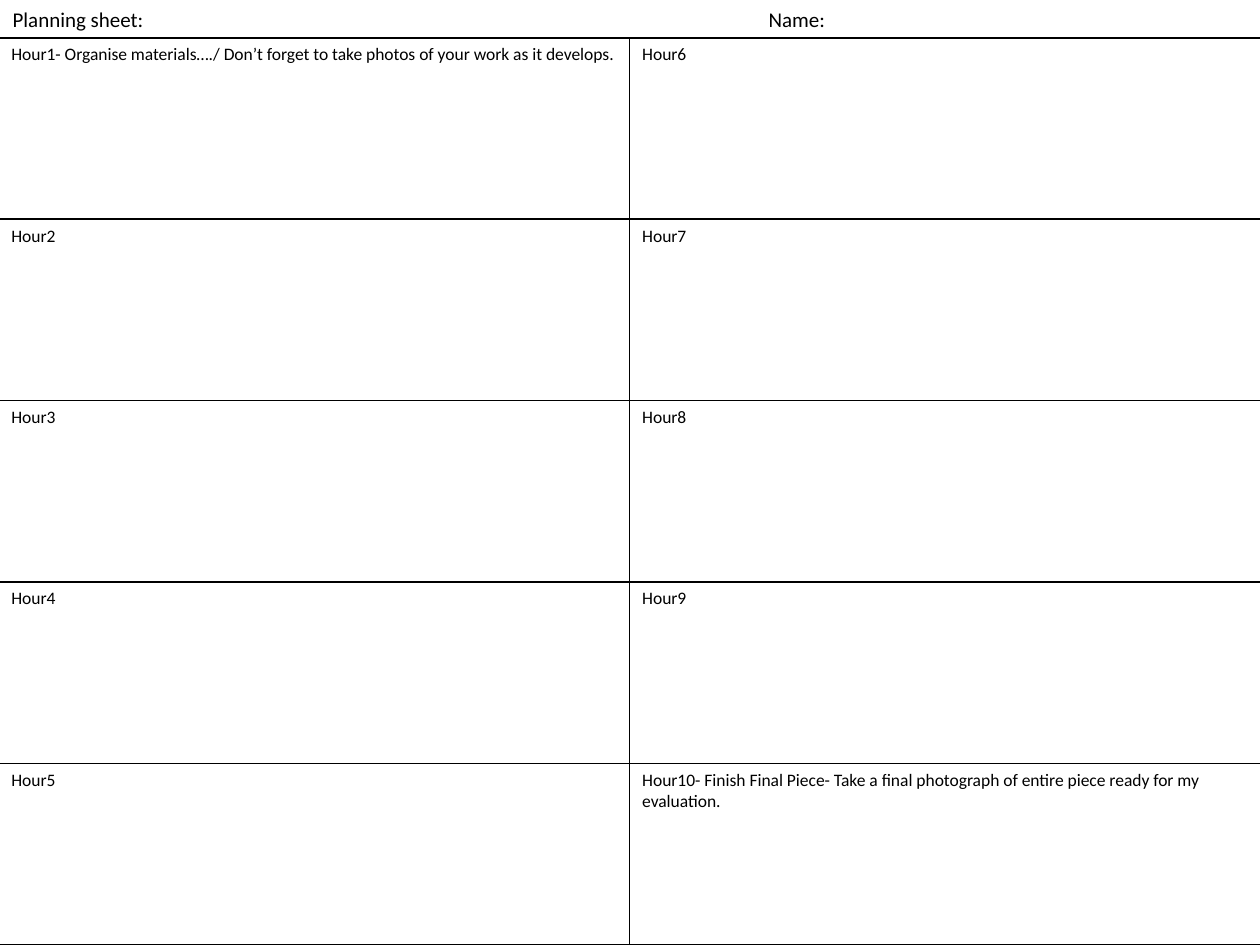
from lxml import etree
from pptx import Presentation
from pptx.dml.color import RGBColor
from pptx.enum.text import MSO_ANCHOR, MSO_AUTO_SIZE, PP_ALIGN
from pptx.oxml.ns import qn
from pptx.util import Pt

TOP = MSO_ANCHOR.TOP
NO_AUTOFIT = MSO_AUTO_SIZE.NONE
LEFT = PP_ALIGN.LEFT
BLACK = RGBColor(0, 0, 0)
FONT = "Calibri"
TITLE_ONLY_LAYOUT = 5
HEADING_HEIGHT = 21.6
ROW_HEIGHT = 103.68
COLUMN_WIDTH = 360.5
HOURS_PER_COLUMN = 5
HOUR_NOTES = {
    1: "- Organise materials…./ Don’t forget to take photos of your work as it develops.",
    10: "- Finish Final Piece- Take a final photograph of entire piece ready for my evaluation.",
}


def format_paragraph(paragraph, size):
    paragraph.alignment = LEFT
    values = {"name": FONT, "size": Pt(size), "bold": False}
    for name, value in values.items():
        setattr(paragraph.font, name, value)
    for run in paragraph.runs:
        for name, value in values.items():
            setattr(run.font, name, value)
        run.font.color.rgb = BLACK


def add_borders(cell):
    properties = cell._tc.get_or_add_tcPr()
    for side in ("lnL", "lnR", "lnT", "lnB"):
        line = etree.SubElement(properties, qn(f"a:{side}"), w=str(Pt(1)))
        fill = etree.SubElement(line, qn("a:solidFill"))
        etree.SubElement(fill, qn("a:srgbClr"), val=str(BLACK))


presentation = Presentation()
presentation.slide_width = Pt(720)
presentation.slide_height = Pt(540)
slide = presentation.slides.add_slide(presentation.slide_layouts[TITLE_ONLY_LAYOUT])

heading = slide.shapes.title
heading_box = {"left": 0, "top": 0, "width": 720, "height": HEADING_HEIGHT}
for name, value in heading_box.items():
    setattr(heading, name, Pt(value))
heading_frame = heading.text_frame
heading_format = {
    "text": "Planning sheet:\tName:",
    "word_wrap": True,
    "auto_size": NO_AUTOFIT,
    "vertical_anchor": TOP,
    "margin_left": Pt(7.2),
    "margin_right": Pt(7.2),
    "margin_top": Pt(3.6),
    "margin_bottom": Pt(3.6),
}
for name, value in heading_format.items():
    setattr(heading_frame, name, value)
heading_paragraph = heading_frame.paragraphs[0]
tab_list = etree.SubElement(heading_paragraph._p.get_or_add_pPr(), qn("a:tabLst"))
etree.SubElement(tab_list, qn("a:tab"), pos=str(Pt(432)), algn="l")
format_paragraph(heading_paragraph, 12)

planner = slide.shapes.add_table(
    HOURS_PER_COLUMN, 2, Pt(-0.72), Pt(HEADING_HEIGHT),
    Pt(2 * COLUMN_WIDTH), Pt(HOURS_PER_COLUMN * ROW_HEIGHT),
).table
planner.first_row = False
planner.horz_banding = False
for column in planner.columns:
    column.width = Pt(COLUMN_WIDTH)
for row in planner.rows:
    row.height = Pt(ROW_HEIGHT)

for hour in range(1, 2 * HOURS_PER_COLUMN + 1):
    column_index, row_index = divmod(hour - 1, HOURS_PER_COLUMN)
    cell = planner.cell(row_index, column_index)
    cell.text = f"Hour{hour}{HOUR_NOTES.get(hour, '')}"
    cell.vertical_anchor = TOP
    add_borders(cell)
    cell.fill.background()
    format_paragraph(cell.text_frame.paragraphs[0], 10)

presentation.save("out.pptx")
